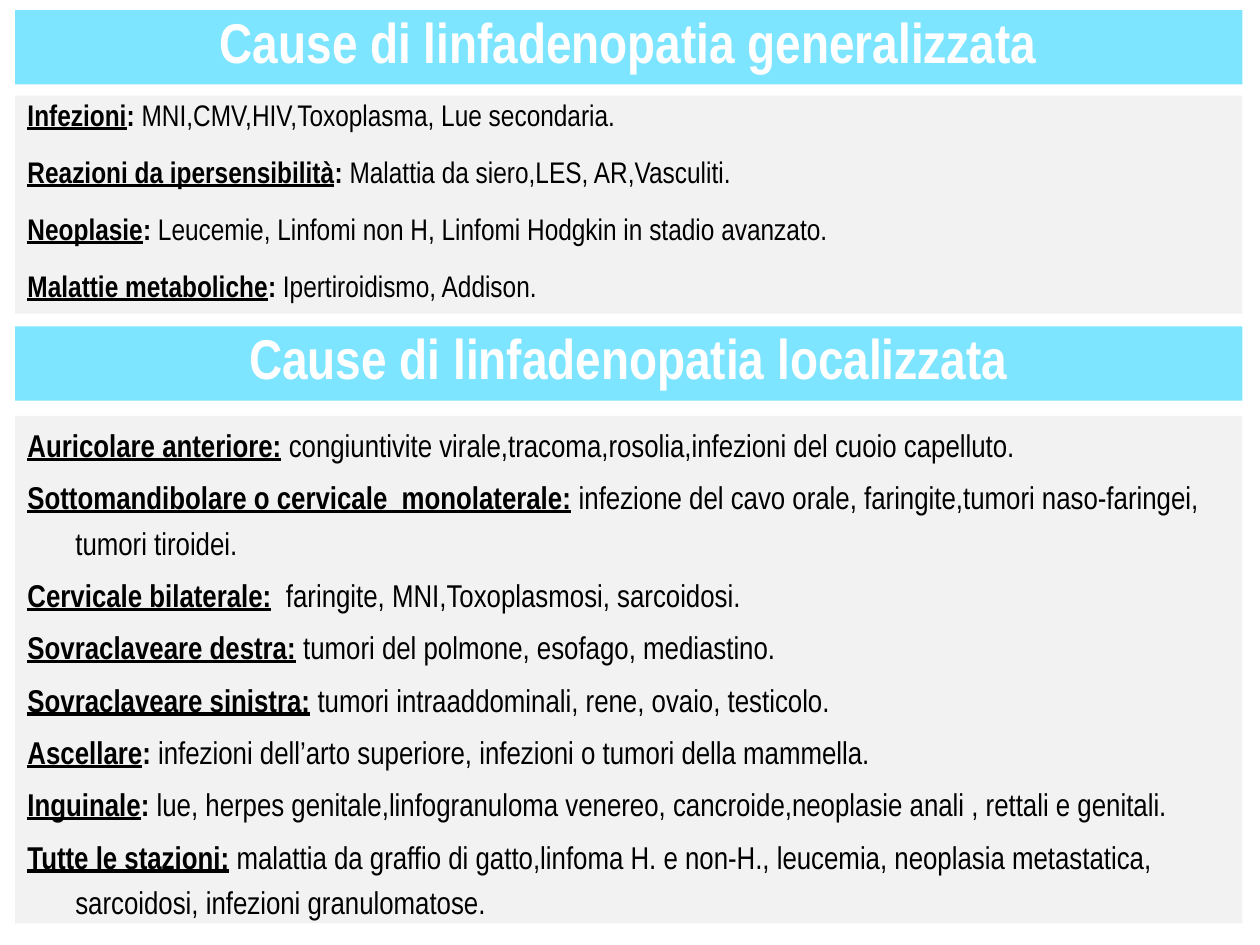
import pptx
import pptx.util
import pptx.dml.color
import pptx.enum.shapes
import pptx.enum.text
import pptx.oxml.ns
import lxml.etree
from dataclasses import dataclass

Inches, Pt = pptx.util.Inches, pptx.util.Pt
RGBColor = pptx.dml.color.RGBColor
Align = pptx.enum.text.PP_ALIGN


@dataclass(frozen=True)
class Theme:
    font: str = "Arial Narrow"
    banner: RGBColor = RGBColor(0x00, 0xCC, 0xFF)
    banner_alpha: int = 51
    panel: RGBColor = RGBColor(0xF2, 0xF2, 0xF2)
    title_text: RGBColor = RGBColor(0xFF, 0xFF, 0xFF)
    body_text: RGBColor = RGBColor(0x00, 0x00, 0x00)
    title_size: int = 32
    general_size: int = 17
    local_size: int = 18


theme = Theme()

# Each cause: underlined label, bold separator, plain text
general_causes = [
    ("Infezioni", ": ", "MNI,CMV,HIV,Toxoplasma, Lue secondaria."),
    ("Reazioni da ipersensibilità", ": ", "Malattia da siero,LES, AR,Vasculiti."),
    ("Neoplasie", ": ", "Leucemie, Linfomi non H, Linfomi Hodgkin in stadio avanzato."),
    ("Malattie metaboliche", ": ", "Ipertiroidismo, Addison."),
]
local_causes = [
    ("Auricolare anteriore:", " ",
     "congiuntivite virale,tracoma,rosolia,infezioni del cuoio capelluto."),
    ("Sottomandibolare o cervicale  monolaterale:", "",
     " infezione del cavo orale, faringite,tumori naso-faringei, tumori tiroidei."),
    ("Cervicale bilaterale:", "  ", "faringite, MNI,Toxoplasmosi, sarcoidosi."),
    ("Sovraclaveare destra:", " ", "tumori del polmone, esofago, mediastino."),
    ("Sovraclaveare sinistra:", " ", "tumori intraaddominali, rene, ovaio, testicolo."),
    ("Ascellare", ":", " infezioni dell’arto superiore, infezioni o tumori della mammella."),
    ("Inguinale", ": ",
     "lue, herpes genitale,linfogranuloma venereo, cancroide,neoplasie anali , rettali e genitali."),
    ("Tutte le stazioni:", "",
     " malattia da graffio di gatto,linfoma H. e non-H., leucemia, neoplasia metastatica, "
     "sarcoidosi, infezioni granulomatose."),
]

presentation = pptx.Presentation()
presentation.slide_width, presentation.slide_height = Inches(10), Inches(7.5)
slide = presentation.slides.add_slide(presentation.slide_layouts[6])


def add_block(top, height, color):
    """Full-width borderless rectangle, ready for text."""
    shape = slide.shapes.add_shape(
        pptx.enum.shapes.MSO_SHAPE.RECTANGLE,
        Inches(0.12), Inches(top), Inches(9.74), Inches(height))
    shape.shadow.inherit = False
    shape.fill.solid()
    shape.fill.fore_color.rgb = color
    shape.line.fill.background()
    shape.text_frame.word_wrap = True
    shape.text_frame.vertical_anchor = pptx.enum.text.MSO_ANCHOR.MIDDLE
    return shape


def add_run(paragraph, text, size, color, bold, underline=False):
    run = paragraph.add_run()
    run.text = text
    run.font.color.rgb = color
    font_format = {"name": theme.font, "size": Pt(size), "bold": bold, "underline": underline}
    for name, value in font_format.items():
        setattr(run.font, name, value)


# Title banners
for top, title in [(0.08, "Cause di linfadenopatia generalizzata"),
                   (2.59, "Cause di linfadenopatia localizzata")]:
    banner = add_block(top, 0.59, theme.banner)
    color_element = banner.fill._xPr.find(".//" + pptx.oxml.ns.qn("a:srgbClr"))
    lxml.etree.SubElement(color_element, pptx.oxml.ns.qn("a:alpha"),
                          val=str(theme.banner_alpha * 1000))
    paragraph = banner.text_frame.paragraphs[0]
    paragraph.alignment = Align.CENTER
    paragraph.line_spacing = 0.8
    add_run(paragraph, title, theme.title_size, theme.title_text, True)

# Panels of causes
panels = [
    (0.76, 1.73, general_causes, theme.general_size,
     {"line_spacing": 0.7, "space_after": Pt(14.2)}),
    (3.3, 4.03, local_causes, theme.local_size,
     {"line_spacing": 1.2, "space_after": Pt(0)}),
]
for top, height, causes, size, spacing in panels:
    frame = add_block(top, height, theme.panel).text_frame
    paragraph_format = {"alignment": Align.LEFT, "space_before": Pt(4), **spacing}
    for index, (label, separator, text) in enumerate(causes):
        paragraph = frame.add_paragraph() if index else frame.paragraphs[0]
        for name, value in paragraph_format.items():
            setattr(paragraph, name, value)
        # Hanging indent
        properties = paragraph._p.get_or_add_pPr()
        properties.set("marL", str(Inches(0.38)))
        properties.set("indent", str(-Inches(0.38)))
        add_run(paragraph, label, size, theme.body_text, True, True)
        if separator:
            add_run(paragraph, separator, size, theme.body_text, True)
        add_run(paragraph, text, size, theme.body_text, False)

presentation.save("out.pptx")
